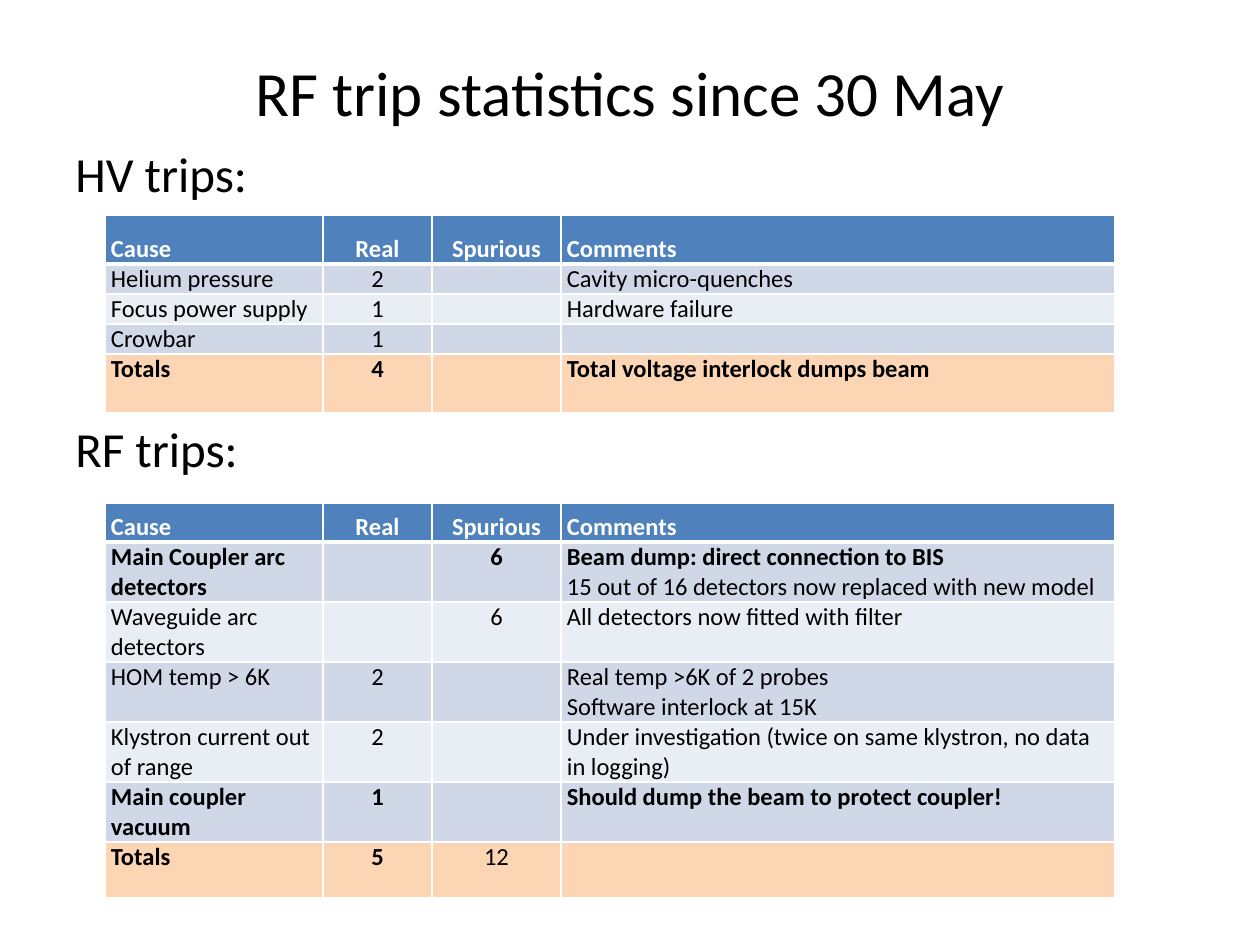
from lxml.etree import SubElement
from pptx import Presentation
from pptx.dml.color import RGBColor as RGB
from pptx.enum.text import MSO_ANCHOR as ANCHOR, PP_ALIGN as ALIGN
from pptx.oxml.ns import qn
from pptx.util import Emu, Pt

PX = 914400 / 126
FONT = "Calibri"
COLORS = {
    "text": "000000",
    "white": "FFFFFF",
    "header": "4F81BD",
    "odd": "D0D8E8",
    "even": "E9EDF4",
    "totals": "FCD5B5",
}
COLUMN_WIDTHS = [218, 109, 129, 554]
COLUMN_ALIGNS = [ALIGN.LEFT, ALIGN.CENTER, ALIGN.CENTER, ALIGN.LEFT]


class Bold(str):
    """Cell text set in bold."""


HEADER = [[Bold(name)] for name in ("Cause", "Real", "Spurious", "Comments")]
HV_ROWS = [
    HEADER,
    [["Helium pressure"], ["2"], [], ["Cavity micro-quenches"]],
    [["Focus power supply"], ["1"], [], ["Hardware failure"]],
    [["Crowbar"], ["1"], [], []],
    [[Bold("Totals")], [Bold("4")], [], [Bold("Total voltage interlock dumps beam")]],
]
RF_ROWS = [
    HEADER,
    [[Bold("Main Coupler arc detectors")], [], [Bold("6")],
     [Bold("Beam dump: direct connection to BIS"),
      "15 out of 16 detectors now replaced with new model"]],
    [["Waveguide arc detectors"], [], ["6"], ["All detectors now fitted with filter"]],
    [["HOM temp > 6K"], ["2"], [],
     ["Real temp >6K of 2 probes", "Software interlock at 15K"]],
    [["Klystron current out of range"], ["2"], [],
     ["Under investigation (twice on same klystron, no data in logging)"]],
    [[Bold("Main coupler vacuum")], [Bold("1")], [],
     [Bold("Should dump the beam to protect coupler!")]],
    [[Bold("Totals")], [Bold("5")], ["12"], []],
]


def px(length):
    return Emu(round(length * PX))


def add_run(paragraph, text, size, color="text", bold=False):
    run = paragraph.add_run()
    run.text = text
    run.font.name = FONT
    run.font.size = Pt(size)
    run.font.bold = bold
    run.font.color.rgb = RGB.from_string(COLORS[color])


def add_heading(slide, box, text, size, align=ALIGN.LEFT, anchor=ANCHOR.TOP):
    frame = slide.shapes.add_textbox(*map(px, box)).text_frame
    frame.word_wrap = True
    frame.vertical_anchor = anchor
    frame.paragraphs[0].alignment = align
    add_run(frame.paragraphs[0], text, size)


def set_borders(cell, top, bottom):
    """Draw white cell borders; call before the fill, which must follow them."""
    properties = cell._tc.get_or_add_tcPr()
    for side, points in (("L", 1), ("R", 1), ("T", top), ("B", bottom)):
        line = SubElement(properties, qn(f"a:ln{side}"), w=str(Pt(points)))
        fill = SubElement(line, qn("a:solidFill"))
        SubElement(fill, qn("a:srgbClr"), val=COLORS["white"])


def fill_cell(cell, lines, align, role):
    is_header = role == "header"
    cell.fill.solid()
    cell.fill.fore_color.rgb = RGB.from_string(COLORS[role])
    cell.margin_left = cell.margin_right = px(6)
    cell.margin_top = cell.margin_bottom = 0
    cell.vertical_anchor = ANCHOR.BOTTOM if is_header else ANCHOR.TOP
    frame = cell.text_frame
    frame.paragraphs[0].font.size = Pt(14)
    for index, text in enumerate(lines):
        paragraph = frame.add_paragraph() if index else frame.paragraphs[0]
        paragraph.alignment = align
        add_run(paragraph, text, 14, "white" if is_header else "text",
                isinstance(text, Bold))


def row_role(index, count):
    if index == 0:
        return "header"
    if index == count - 1:
        return "totals"
    return "odd" if index % 2 else "even"


def add_trip_table(slide, left, top, rows, heights):
    table = slide.shapes.add_table(
        len(rows), len(COLUMN_WIDTHS), px(left), px(top),
        px(sum(COLUMN_WIDTHS)), px(sum(heights))).table
    for column, width in zip(table.columns, COLUMN_WIDTHS):
        column.width = px(width)
    for r, (row, height) in enumerate(zip(rows, heights)):
        table.rows[r].height = px(height)
        for c, (lines, align) in enumerate(zip(row, COLUMN_ALIGNS)):
            cell = table.cell(r, c)
            set_borders(cell, 3 if r == 1 else 1, 3 if r == 0 else 1)
            fill_cell(cell, lines, align, row_role(r, len(rows)))


def add_trip_section(slide, left, top, heading, table_offset, rows, heights):
    add_heading(slide, (left, top, 1134, 72), heading, 28)
    add_trip_table(slide, left + 42, top + table_offset, rows, heights)


def main():
    deck = Presentation()
    deck.slide_width, deck.slide_height = px(1260), px(945)
    slide = deck.slides.add_slide(deck.slide_layouts[6])
    add_heading(slide, (63, 38, 1134, 107), "RF trip statistics since 30 May", 36,
                ALIGN.CENTER, ANCHOR.MIDDLE)
    add_trip_section(slide, 63, 137, "HV trips:", 78, HV_ROWS, [49] + [30] * 3 + [59])
    add_trip_section(slide, 63, 412, "RF trips:", 91, RF_ROWS, [39] + [60] * 5 + [56])
    deck.save("out.pptx")


if __name__ == "__main__":
    main()
